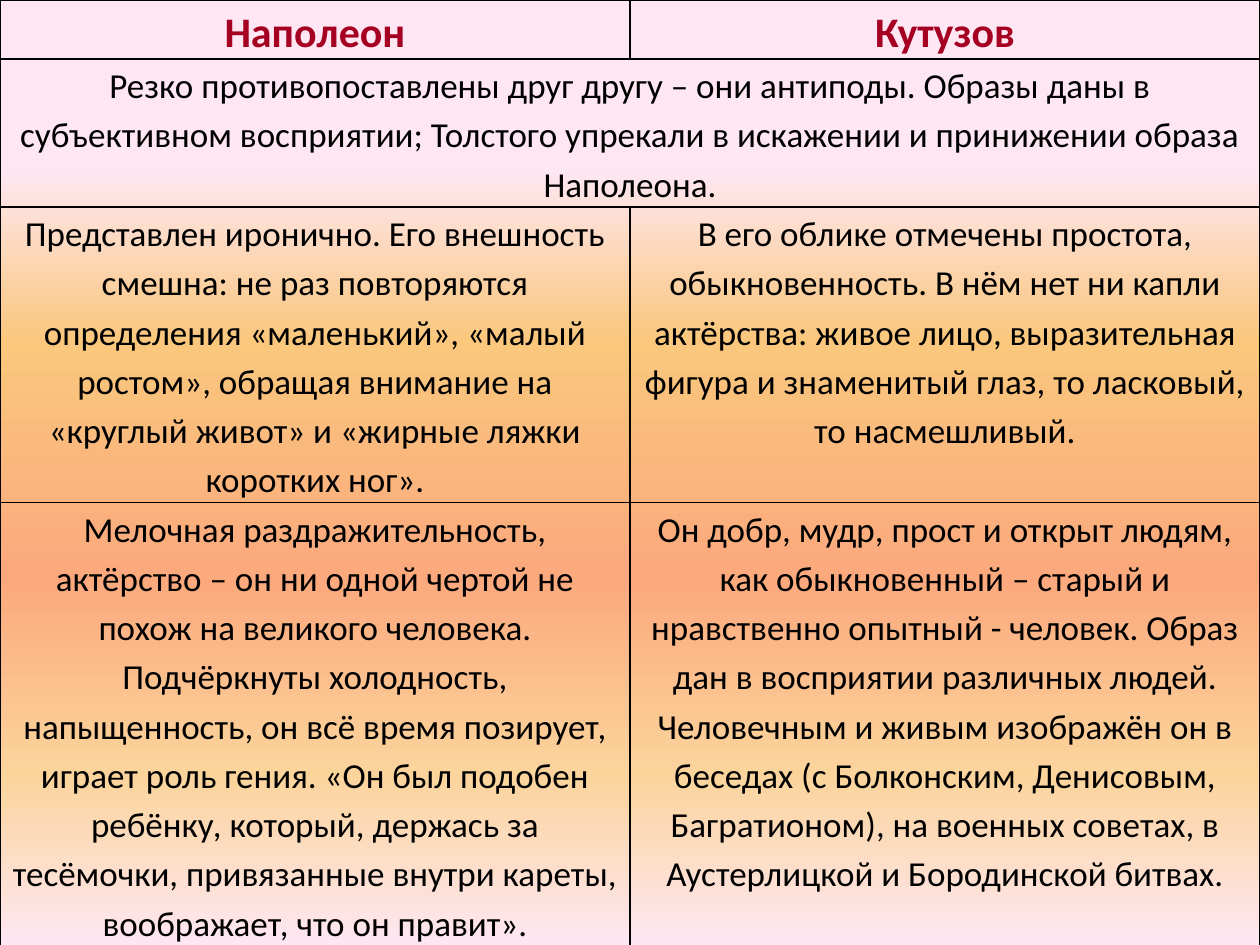
from lxml.etree import SubElement
from pptx import Presentation
from pptx.dml.color import RGBColor
from pptx.enum.text import PP_ALIGN as Align
from pptx.oxml import parse_xml
from pptx.oxml.ns import nsdecls, qn
from pptx.util import Pt

WIDTH, HEIGHT = 720, 540
BLANK_LAYOUT = 6
ROW_HEIGHTS = [28, 83, 124.5, 207.5]
TABLE_HEIGHT = 530
BACKGROUND_STOPS = [
    (18, "FEE7F2"), (36, "FAC77D"), (61, "FBA97D"), (82, "FBD49C"), (100, "FEE7F2"),
]
HEADINGS = ["Наполеон", "Кутузов"]
SHARED_TEXT = (
    "Резко противопоставлены друг другу – они антиподы. Образы даны в субъективном "
    "восприятии; Толстого упрекали в искажении и принижении образа Наполеона."
)
COMPARISONS = [
    [
        "Представлен иронично. Его внешность смешна: не раз повторяются определения "
        "«маленький», «малый ростом», обращая внимание на «круглый живот» и «жирные "
        "ляжки коротких ног».",
        "В его облике отмечены простота, обыкновенность. В нём нет ни капли актёрства: "
        "живое лицо, выразительная фигура и знаменитый глаз, то ласковый, то насмешливый.",
    ],
    [
        "Мелочная раздражительность, актёрство – он ни одной чертой не похож на великого "
        "человека. Подчёркнуты холодность, напыщенность, он всё время позирует, играет "
        "роль гения. «Он был подобен ребёнку, который, держась за тесёмочки, привязанные "
        "внутри кареты, воображает, что он правит».",
        "Он добр, мудр, прост и открыт людям, как обыкновенный – старый и нравственно "
        "опытный - человек. Образ дан в восприятии различных людей. Человечным и живым "
        "изображён он в беседах (с Болконским, Денисовым, Багратионом), на военных "
        "советах, в Аустерлицкой и Бородинской битвах.",
    ],
]


def color(value):
    return RGBColor.from_string(value)


def paint_background(slide, stops):
    fill = slide.background.fill
    fill.gradient()
    fill.gradient_angle = 270  # counterclockwise, so the stops run downwards
    stop_list = slide.element.find(".//" + qn("a:gsLst"))
    for old_stop in list(stop_list):
        stop_list.remove(old_stop)
    for percent, value in stops:
        stop = SubElement(stop_list, qn("a:gs"), pos=str(percent * 1000))
        SubElement(stop, qn("a:srgbClr"), val=value)


def add_borders(cell, value="000000", width=1):
    properties = cell._tc.get_or_add_tcPr()
    for index, side in enumerate("LRTB"):
        properties.insert(index, parse_xml(
            f'<a:ln{side} {nsdecls("a")} w="{Pt(width)}"><a:solidFill>'
            f'<a:srgbClr val="{value}"/></a:solidFill></a:ln{side}>'
        ))


def format_cell(cell):
    cell.fill.background()
    cell.margin_left = cell.margin_right = Pt(5)
    cell.margin_top = cell.margin_bottom = 0
    add_borders(cell)


def write_text(cell, text, size=20, value="000000", bold=False):
    paragraph = cell.text_frame.paragraphs[0]
    paragraph.alignment = Align.CENTER
    paragraph.line_spacing = 1.15
    run = paragraph.add_run()
    run.text = text
    font = run.font
    font.name, font.size, font.bold = "Calibri", Pt(size), bold
    font.color.rgb = color(value)


def add_comparison_table(slide):
    frame = slide.shapes.add_table(
        len(ROW_HEIGHTS), len(HEADINGS), 0, 0, Pt(WIDTH), Pt(TABLE_HEIGHT)
    )
    table = frame.table
    table.first_row = table.horz_banding = False
    for row, height in zip(table.rows, ROW_HEIGHTS):
        row.height = Pt(height)
    for cell in table.iter_cells():
        format_cell(cell)

    for column, heading in enumerate(HEADINGS):
        write_text(table.cell(0, column), heading, size=24, value="A50021", bold=True)
    table.cell(1, 0).merge(table.cell(1, 1))
    write_text(table.cell(1, 0), SHARED_TEXT)
    for row_index, texts in enumerate(COMPARISONS, start=2):
        for column, text in enumerate(texts):
            write_text(table.cell(row_index, column), text)


def main():
    presentation = Presentation()
    presentation.slide_width, presentation.slide_height = Pt(WIDTH), Pt(HEIGHT)
    slide = presentation.slides.add_slide(presentation.slide_layouts[BLANK_LAYOUT])
    paint_background(slide, BACKGROUND_STOPS)
    add_comparison_table(slide)
    presentation.save("out.pptx")


if __name__ == "__main__":
    main()
